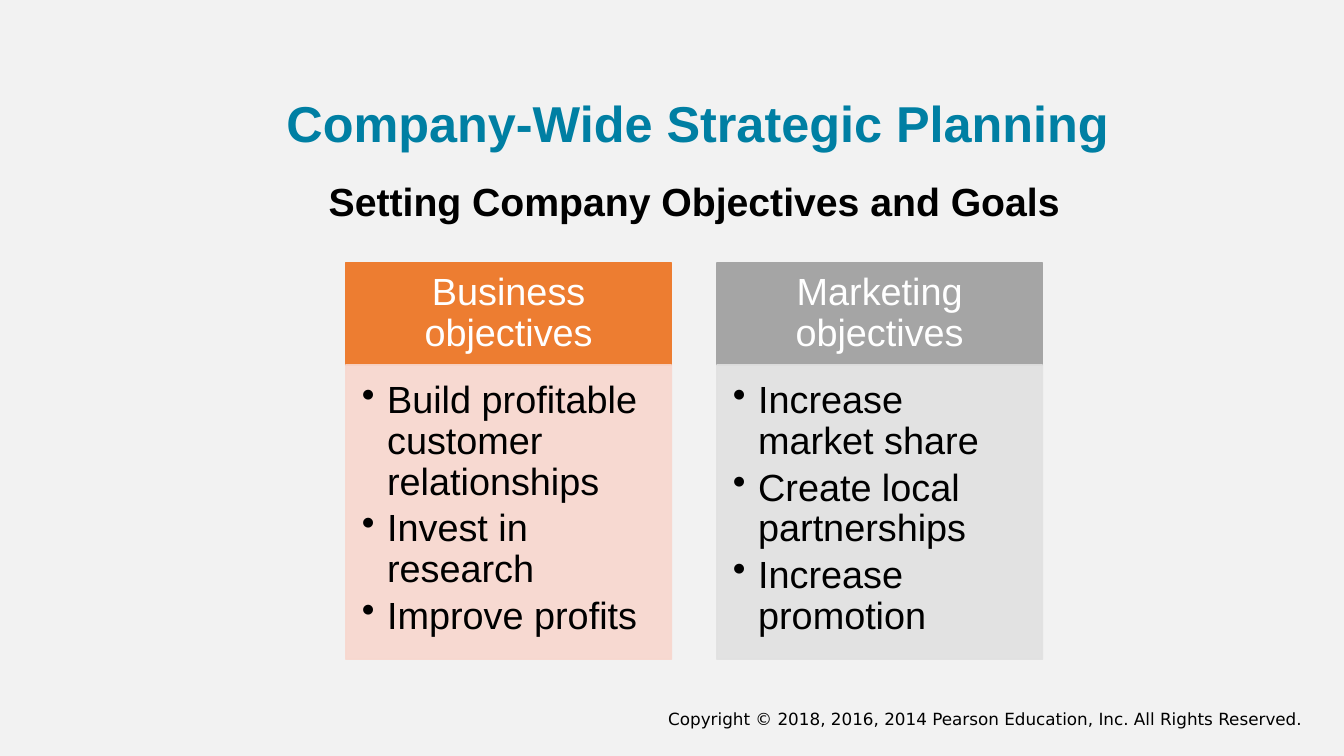
from lxml.etree import SubElement
from pptx import Presentation
from pptx.dml.color import RGBColor
from pptx.enum.shapes import MSO_SHAPE as Shape
from pptx.enum.text import MSO_ANCHOR as Anchor, MSO_AUTO_SIZE as AutoSize, PP_ALIGN as Align
from pptx.oxml.ns import qn
from pptx.util import Inches, Pt

WIDTH, HEIGHT = 13.33, 7.5
TITLE = "Company-Wide Strategic Planning"
SUBTITLE = "Setting Company Objectives and Goals"
COPYRIGHT = "Copyright © 2018, 2016, 2014 Pearson Education, Inc. All Rights Reserved."
COLUMNS = [
    ("Business objectives", "ED7D31", "F8D7CE",
     ["Build profitable customer relationships", "Invest in research", "Improve profits"]),
    ("Marketing objectives", "A5A5A5", "E1E1E1",
     ["Increase market share", "Create local partnerships", "Increase promotion"]),
]
GRID_LEFT, GRID_TOP = 3.43, 2.61
COLUMN_WIDTH, COLUMN_STEP = 3.23, 3.68
HEADER_HEIGHT, LIST_HEIGHT = 1.01, 2.92
INDENT = 0.25


def color(value):
    return RGBColor.from_string(value)


def place(box, left, top, width, height):
    box.left, box.top, box.width, box.height = map(Inches, (left, top, width, height))


def set_bullet(para, bullet):
    """Give the paragraph a hanging bullet, or none when bullet is empty."""
    properties = para._p.get_or_add_pPr()
    indent = Inches(INDENT) if bullet else 0
    properties.set("marL", str(indent))
    properties.set("indent", str(-indent))
    if bullet:
        SubElement(properties, qn("a:buChar"), char=bullet)
    else:
        SubElement(properties, qn("a:buNone"))


def write(box, lines, size, ink="000000", font="Arial", bold=False, align=Align.LEFT,
          anchor=Anchor.TOP, insets=(0.1, 0.05, 0.1, 0.05), bullet="", spacing=0.9, after=0):
    frame = box.text_frame
    frame.word_wrap = True
    frame.auto_size = AutoSize.NONE
    frame.vertical_anchor = anchor
    (frame.margin_left, frame.margin_top,
     frame.margin_right, frame.margin_bottom) = map(Inches, insets)
    frame.text = "\n".join(lines)
    for para in frame.paragraphs:
        para.alignment = align
        para.line_spacing = spacing
        para.space_before, para.space_after = Pt(0), Pt(after)
        set_bullet(para, bullet)
        for span in para.runs:
            span.font.name, span.font.size, span.font.bold = font, Pt(size), bold
            span.font.color.rgb = color(ink)


def add_panel(page, left, top, height, shade, opacity=100):
    panel = page.shapes.add_shape(Shape.RECTANGLE, Inches(left), Inches(top),
                                  Inches(COLUMN_WIDTH), Inches(height))
    panel.shadow.inherit = False
    panel.line.width = Pt(1)
    for paint in (panel.fill, panel.line.fill):
        paint.solid()
        paint.fore_color.rgb = color(shade)
    if opacity < 100:
        for tone in panel._element.spPr.iter(qn("a:srgbClr")):
            SubElement(tone, qn("a:alpha"), val=str(opacity * 1000))
    return panel


def main():
    deck = Presentation()
    deck.slide_width, deck.slide_height = Inches(WIDTH), Inches(HEIGHT)
    page = deck.slides.add_slide(deck.slide_layouts[1])
    page.background.fill.solid()
    page.background.fill.fore_color.rgb = color("F2F2F2")

    title, subtitle = page.placeholders
    place(title, 2.74, 0.74, 8.7, 1.02)
    write(title, [TITLE], 36, "007FA3", bold=True, anchor=Anchor.MIDDLE)
    place(subtitle, 3.16, 1.76, 8.9, 0.63)
    write(subtitle, [SUBTITLE], 28, bold=True)

    for index, (heading, strong, pale, goals) in enumerate(COLUMNS):
        left = GRID_LEFT + index * COLUMN_STEP
        header = add_panel(page, left, GRID_TOP, HEADER_HEIGHT, strong)
        write(header, [heading], 27, "FFFFFF", align=Align.CENTER, anchor=Anchor.MIDDLE,
              insets=(0.21, 0.12, 0.21, 0.12))
        goal_list = add_panel(page, left, GRID_TOP + HEADER_HEIGHT, LIST_HEIGHT, pale, opacity=90)
        write(goal_list, goals, 27, insets=(0.16, 0.16, 0.21, 0.24), bullet="•", after=4)

    footer = page.shapes.add_textbox(Inches(6.21), Inches(6.98), Inches(6.81), Inches(0.31))
    write(footer, [COPYRIGHT], 12, font="DejaVu Sans", align=Align.RIGHT, spacing=1.0)
    deck.save("out.pptx")


if __name__ == "__main__":
    main()
